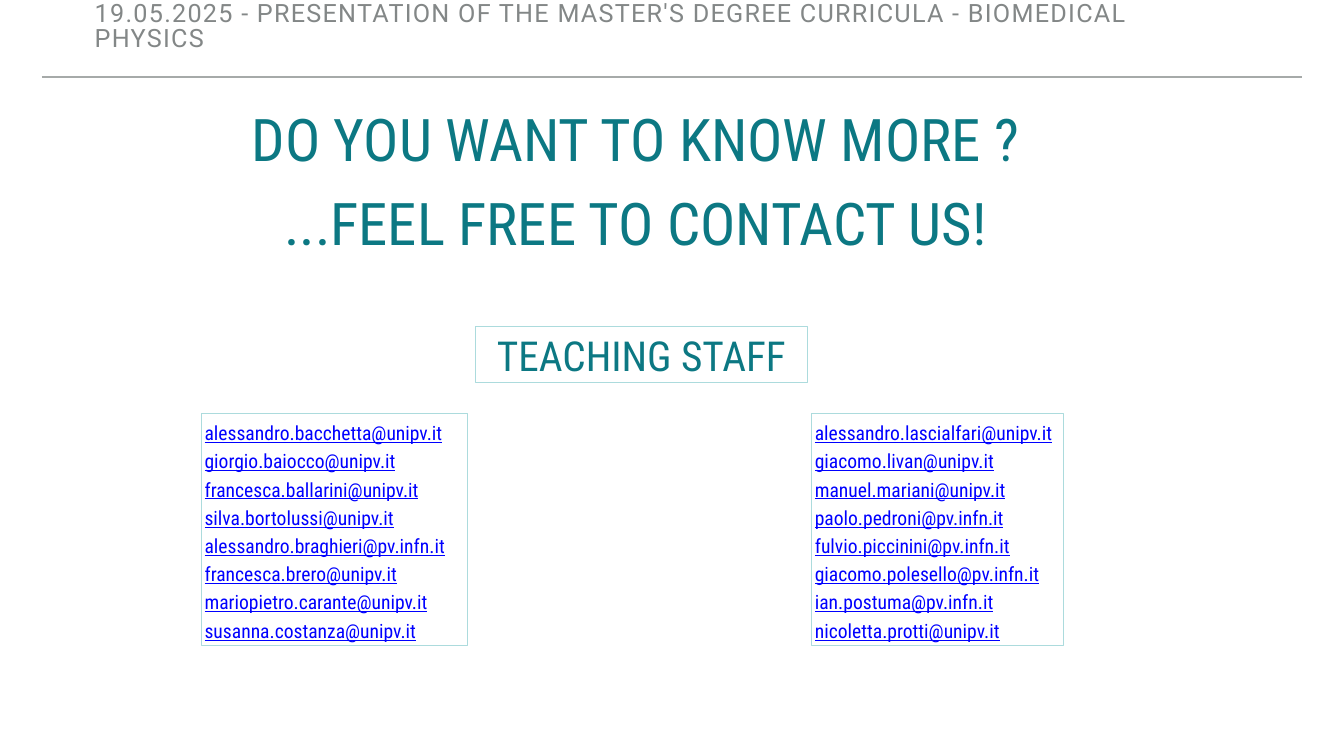
import pptx
import pptx.dml.color
import pptx.enum.shapes
import pptx.enum.text
import pptx.oxml.ns
import pptx.util
import lxml.etree

Inches, Pt = pptx.util.Inches, pptx.util.Pt
ALIGN = pptx.enum.text.PP_ALIGN
ANCHOR = pptx.enum.text.MSO_ANCHOR
AUTO = pptx.enum.text.MSO_AUTO_SIZE
COLORS = {"teal": "0C7883", "frame": "ACDBDD", "link": "0000FF",
          "gray": "838787", "rule": "A6AAA9"}
W, H = 26.67, 15
CONDENSED = "Roboto Condensed"


def rgb(name):
    return pptx.dml.color.RGBColor.from_string(COLORS[name])


def write(sp, lines, size, color, align, anchor, font=CONDENSED, spacing=1.0, fit=AUTO.SHAPE_TO_FIT_TEXT):
    """Fill a shape with one paragraph per line and format its runs."""
    tf = sp.text_frame
    tf.text = "\n".join(lines)
    tf.word_wrap = True
    tf.auto_size = fit
    tf.vertical_anchor = anchor
    tf.margin_left = tf.margin_right = tf.margin_top = tf.margin_bottom = Inches(0.06)
    for p in tf.paragraphs:
        p.alignment = align
        p.line_spacing = spacing
        p.space_before = Pt(0)
        for r in p.runs:
            r.font.name = font
            r.font.size = Pt(size)
            r.font.color.rgb = rgb(color)
            r.font.underline = color == "link"
    return tf


prs = pptx.Presentation()
prs.slide_width, prs.slide_height = Inches(W), Inches(H)
s = prs.slides.add_slide(prs.slide_layouts[5])

# Rule below the running header
rule = s.shapes.add_connector(pptx.enum.shapes.MSO_CONNECTOR.STRAIGHT,
                              Inches(0.83), Inches(1.53), Inches(W - 0.84), Inches(1.53))
rule.line.color.rgb = rgb("rule")
rule.line.width = Pt(2)
lxml.etree.SubElement(rule._element.spPr, pptx.oxml.ns.qn("a:effectLst"))

# Title
title = s.shapes.title
title.left, title.top, title.width, title.height = map(Inches, (2.98, 1.98, 19.27, 3.79))
tf = write(title, ["DO YOU WANT TO KNOW MORE ?", "...FEEL FREE TO CONTACT US!"],
           84, "teal", ALIGN.CENTER, ANCHOR.TOP, fit=AUTO.NONE)
tf.paragraphs[1].line_spacing = 0.8
tf.paragraphs[1].space_before = Pt(39)

# Framed boxes: two address columns and the staff heading
LEFT_STAFF = ["alessandro.bacchetta@unipv.it", "giorgio.baiocco@unipv.it",
              "francesca.ballarini@unipv.it", "silva.bortolussi@unipv.it",
              "alessandro.braghieri@pv.infn.it", "francesca.brero@unipv.it",
              "mariopietro.carante@unipv.it", "susanna.costanza@unipv.it"]
RIGHT_STAFF = ["alessandro.lascialfari@unipv.it", "giacomo.livan@unipv.it",
               "manuel.mariani@unipv.it", "paolo.pedroni@pv.infn.it",
               "fulvio.piccinini@pv.infn.it", "giacomo.polesello@pv.infn.it",
               "ian.postuma@pv.infn.it", "nicoletta.protti@unipv.it"]
BOXES = [
    ((4, 8.2, 5.27, 4.6), LEFT_STAFF, 28, "link", ALIGN.LEFT, 1.2),
    ((16.11, 8.2, 4.99, 4.6), RIGHT_STAFF, 28, "link", ALIGN.LEFT, 1.2),
    ((9.44, 6.48, 6.58, 1.11), ["TEACHING STAFF"], 59, "teal", ALIGN.CENTER, 1.0),
]
for place, lines, size, color, align, spacing in BOXES:
    sp = s.shapes.add_shape(pptx.enum.shapes.MSO_SHAPE.RECTANGLE, *map(Inches, place))
    sp.shadow.inherit = False
    sp.fill.background()
    sp.line.color.rgb = rgb("frame")
    sp.line.width = Pt(1)
    write(sp, lines, size, color, align, ANCHOR.MIDDLE, spacing=spacing)

# Running header with letter spacing
header = s.shapes.add_textbox(*map(Inches, (1.82, 0.48, 22.92, 0.61)))
tf = write(header, ["19.05.2025 - PRESENTATION OF THE MASTER'S DEGREE CURRICULA - BIOMEDICAL PHYSICS"],
           36, "gray", ALIGN.LEFT, ANCHOR.BOTTOM, font="Roboto", spacing=0.8)
tf.paragraphs[0].runs[0].font._element.set("spc", "180")

prs.save("out.pptx")
